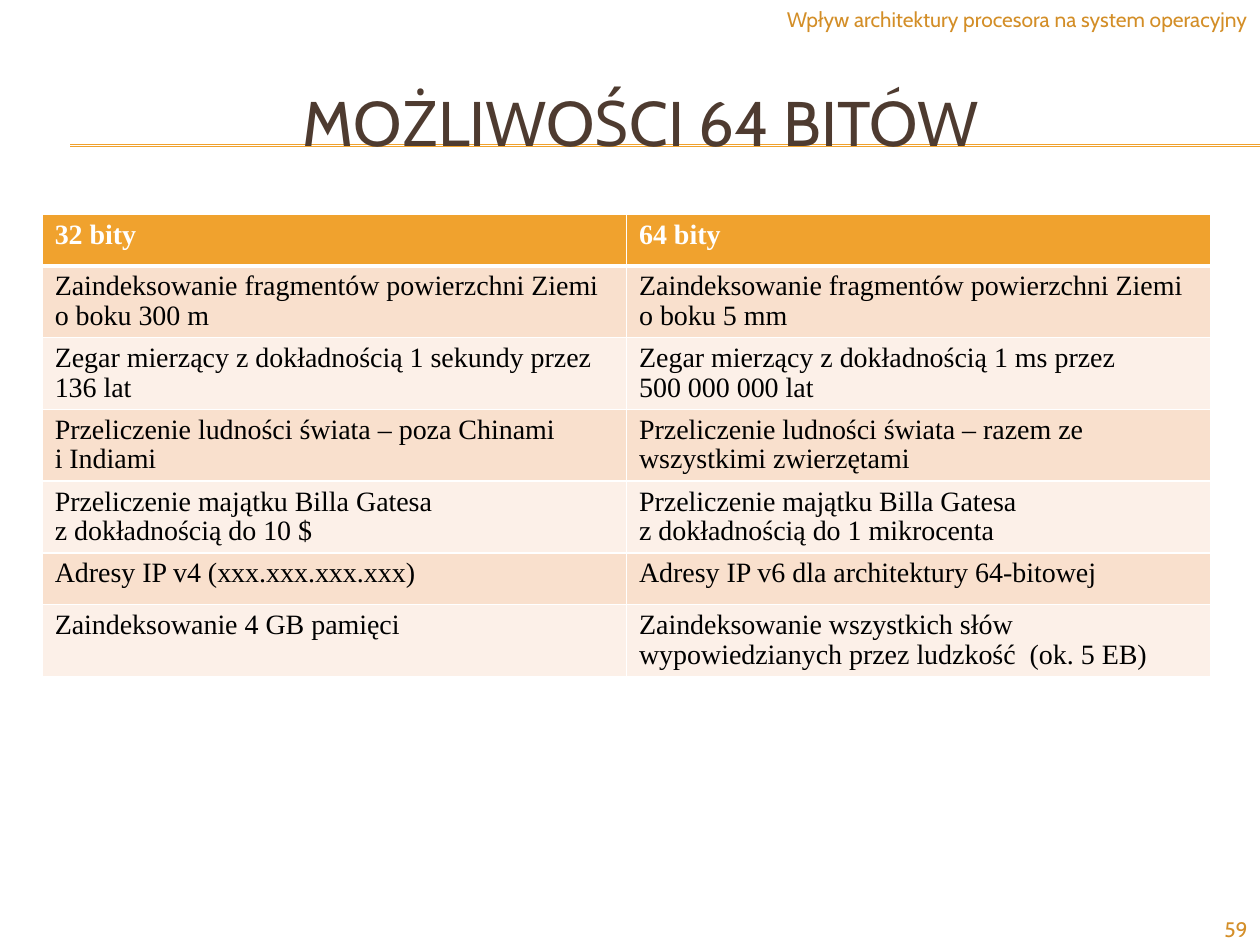
from dataclasses import dataclass
from pptx import Presentation
from pptx.dml.color import RGBColor as Rgb
from pptx.enum.shapes import MSO_CONNECTOR as Conn
from pptx.enum.text import MSO_ANCHOR as Anchor, PP_ALIGN as Align
from pptx.util import Cm, Pt
from lxml.etree import SubElement as Sub
from pptx.oxml.ns import qn

HEX = {
    "gold": "F0A22E", "brown": "4E3B30", "page": "D48F29", "topic": "D38E27",
    "dark": "F9E0CD", "light": "FCF0E8", "white": "FFFFFF", "black": "000000",
}
HEAD, BODY = "Cabin", "Times New Roman"


@dataclass
class Label:
    text: str
    left: float
    top: float
    width: float
    height: float
    color: str


LABELS = [
    Label("59", 23.29, 18.36, 2.11, 0.69, "page"),
    Label("Wpływ architektury procesora na system operacyjny",
          14.5, 0, 10.9, 0.79, "topic"),
]

ROWS = [
    ("32 bity", "64 bity"),
    ("Zaindeksowanie fragmentów powierzchni Ziemi o boku 300 m",
     "Zaindeksowanie fragmentów powierzchni Ziemi o boku 5 mm"),
    ("Zegar mierzący z dokładnością 1 sekundy przez 136 lat",
     "Zegar mierzący z dokładnością 1 ms przez\n500 000 000 lat"),
    ("Przeliczenie ludności świata – poza Chinami\ni Indiami",
     "Przeliczenie ludności świata – razem ze wszystkimi zwierzętami"),
    ("Przeliczenie majątku Billa Gatesa\nz dokładnością do 10 $",
     "Przeliczenie majątku Billa Gatesa\nz dokładnością do 1 mikrocenta"),
    ("Adresy IP v4 (xxx.xxx.xxx.xxx)",
     "Adresy IP v6 dla architektury 64-bitowej"),
    ("Zaindeksowanie 4 GB pamięci",
     "Zaindeksowanie wszystkich słów wypowiedzianych przez ludzkość  (ok. 5 EB)"),
]


def style(frame, font: str, size: float, color: str, align=Align.LEFT,
          bold: bool = False, space: float = 1.0) -> None:
    for para in frame.paragraphs:
        para.alignment = align
        para.line_spacing = space
        for run in para.runs:
            run.font.name = font
            run.font.size = Pt(size)
            run.font.bold = bold
            run.font.color.rgb = Rgb.from_string(HEX[color])


def place(shape, left: float, top: float, width: float, height: float) -> None:
    shape.left, shape.top = Cm(left), Cm(top)
    shape.width, shape.height = Cm(width), Cm(height)


def draw_rule(slide, top: float) -> None:
    line = slide.shapes.add_connector(
        Conn.STRAIGHT, Cm(1.42), Cm(top), Cm(25.4), Cm(top))
    line.line.color.rgb = Rgb.from_string(HEX["gold"])
    line.line.width = Pt(0.75)
    node = line._element
    Sub(node.spPr, qn("a:effectLst"))
    node.getparent().insert(2, node)  # behind the title


def draw_label(slide, label: Label) -> None:
    box = slide.shapes.add_textbox(0, 0, 0, 0)
    place(box, label.left, label.top, label.width, label.height)
    box.text_frame.word_wrap = True
    box.text_frame.text = label.text
    style(box.text_frame, HEAD, 12, label.color, Align.RIGHT)


def set_edges(cell, base: float) -> None:
    props = cell._tc.get_or_add_tcPr()
    for side, width in (("L", 1), ("R", 1), ("T", 1), ("B", base)):
        edge = Sub(props, qn(f"a:ln{side}"), w=str(Pt(width)))
        fill = Sub(edge, qn("a:solidFill"))
        Sub(fill, qn("a:srgbClr"), val=HEX["white"])


def draw_table(slide) -> None:
    frame = slide.shapes.add_table(
        len(ROWS), 2, Cm(0.85), Cm(4.32), Cm(23.56), Cm(1.04 * len(ROWS)))
    table = frame.table
    table.horz_banding = False
    for r, texts in enumerate(ROWS):
        table.rows[r].height = Cm(1.04)
        top = r == 0
        back = "gold" if top else ("dark" if r % 2 else "light")
        for c, text in enumerate(texts):
            cell = table.cell(r, c)
            cell.text_frame.text = text
            style(cell.text_frame, BODY, 16, "white" if top else "black",
                  bold=top, space=0.95)
            set_edges(cell, 3 if top else 1)
            cell.fill.solid()
            cell.fill.fore_color.rgb = Rgb.from_string(HEX[back])


def main() -> None:
    deck = Presentation()
    deck.slide_width, deck.slide_height = Cm(25.4), Cm(19.05)
    slide = deck.slides.add_slide(deck.slide_layouts[5])

    # Title on its double rule
    title = slide.shapes.title
    place(title, 0.85, 1.27, 24.13, 2.34)
    title.text_frame.text = "MOŻLIWOŚCI 64 BITÓW"
    title.text_frame.vertical_anchor = Anchor.MIDDLE
    style(title.text_frame, HEAD, 36, "brown", Align.CENTER)
    for top in (2.92, 2.95):
        draw_rule(slide, top)

    # Comparison table
    draw_table(slide)

    # Page number and topic
    for label in LABELS:
        draw_label(slide, label)

    deck.save("out.pptx")


if __name__ == "__main__":
    main()
